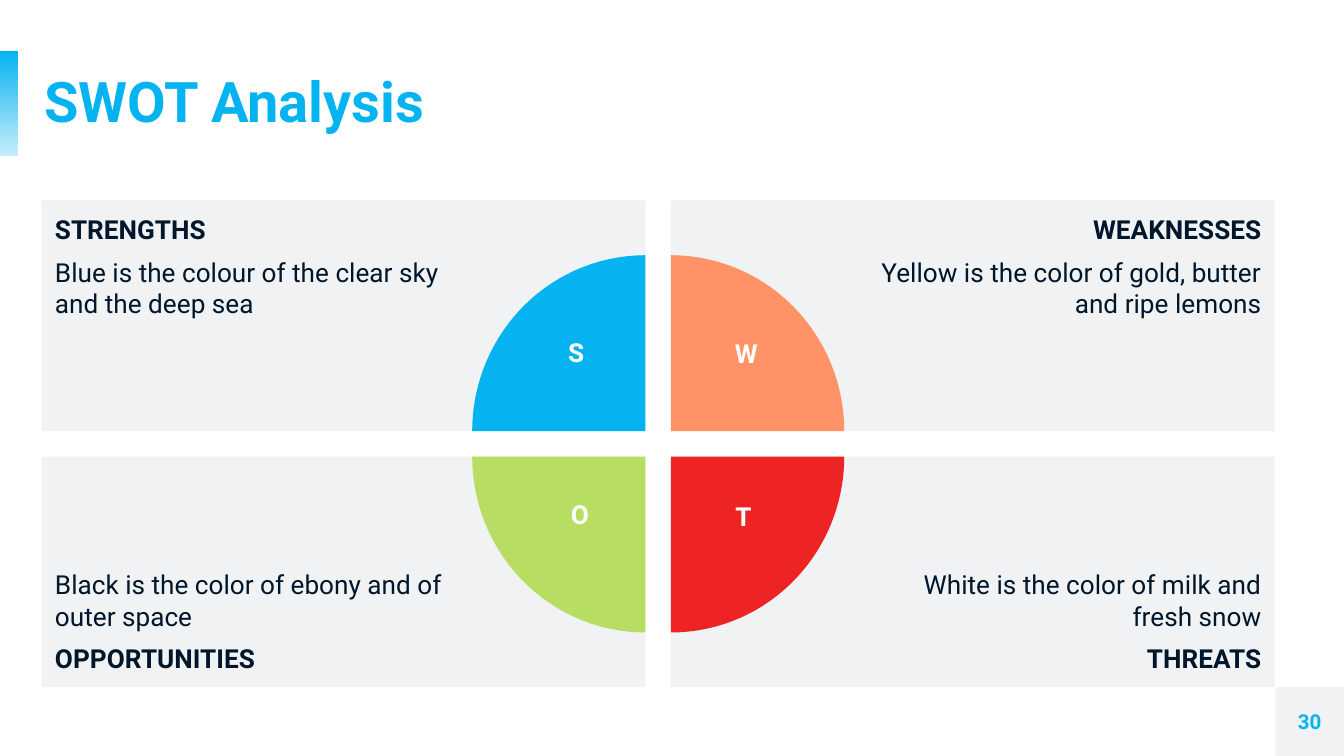
from dataclasses import dataclass

from lxml.etree import SubElement
from pptx import Presentation
from pptx.dml.color import RGBColor as Rgb
from pptx.enum.shapes import MSO_SHAPE as Preset
from pptx.enum.text import MSO_ANCHOR as Anchor, PP_ALIGN as Align
from pptx.oxml.ns import qn
from pptx.util import Cm, Pt


@dataclass(frozen=True)
class Theme:
    font: str = "Roboto"
    accent: str = "05B3F1"
    panel: str = "F0F2F3"
    ink: str = "00162A"
    white: str = "FFFFFF"
    orange: str = "FF9367"
    red: str = "EE2424"
    green: str = "B8DD63"
    title_size: int = 30
    body_size: int = 14
    number_size: int = 11


class SlideBuilder:
    def __init__(self, slide, theme):
        self.slide = slide
        self.theme = theme

    def frame(self, shape, anchor, insets):
        text_frame = shape.text_frame
        text_frame.word_wrap = True
        text_frame.vertical_anchor = anchor
        (text_frame.margin_left, text_frame.margin_top,
         text_frame.margin_right, text_frame.margin_bottom) = map(Cm, insets)
        return text_frame

    def add_text(self, paragraph, text, size, color, bold=True, align=Align.LEFT):
        paragraph.alignment = align
        run = paragraph.add_run()
        run.text = text
        run.font.name = self.theme.font
        run.font.size = Pt(size)
        run.font.bold = bold
        run.font.color.rgb = Rgb.from_string(color)

    def shape(self, preset, box, color):
        shape = self.slide.shapes.add_shape(preset, *map(Cm, box))
        shape.shadow.inherit = False
        shape.line.fill.background()
        shape.fill.solid()
        shape.fill.fore_color.rgb = Rgb.from_string(color)
        return shape

    def fading_bar(self, box):
        bar = self.shape(Preset.RECTANGLE, box, self.theme.accent)
        bar.fill.gradient()
        bar.fill.gradient_angle = 90
        for stop in bar.fill.gradient_stops:
            stop.color.rgb = Rgb.from_string(self.theme.accent)
        first_color = bar.element.xpath(".//a:gs[1]/a:srgbClr")[0]
        SubElement(first_color, qn("a:alpha"), val="22000")

    def title(self, text, box):
        title = self.slide.shapes.title
        title.left, title.top, title.width, title.height = map(Cm, box)
        paragraph = self.frame(title, Anchor.MIDDLE, (0, 0, 0, 0)).paragraphs[0]
        paragraph.line_spacing = 0.9
        self.add_text(paragraph, text, self.theme.title_size, self.theme.accent)

    def label(self, text, box, size, color, anchor=Anchor.TOP, insets=(0.25, 0.13, 0.25, 0.13)):
        holder = self.slide.shapes.add_textbox(*map(Cm, box))
        paragraph = self.frame(holder, anchor, insets).paragraphs[0]
        self.add_text(paragraph, text, size, color, align=Align.CENTER)

    def panel(self, box, heading, body, on_right, on_bottom):
        panel = self.shape(Preset.RECTANGLE, box, self.theme.panel)
        # The wide inset keeps the text clear of the quarter circle
        insets = (3.81, 0.25, 0.25, 0.25) if on_right else (0.25, 0.25, 3.81, 0.25)
        text_frame = self.frame(panel, Anchor.BOTTOM if on_bottom else Anchor.TOP, insets)
        lines = [(heading, True), (body, False)]
        if on_bottom:
            lines.reverse()
        first, last = text_frame.paragraphs[0], text_frame.add_paragraph()
        for paragraph, (text, bold) in zip((first, last), lines):
            self.add_text(paragraph, text, self.theme.body_size, self.theme.ink, bold,
                          Align.RIGHT if on_right else Align.LEFT)
        last.space_before = last.space_after = Pt(6)

    def quarter(self, center_x, center_y, rotation, color):
        width, height = 6.55, 6.65
        if rotation % 180:
            width, height = height, width
        box = (center_x - width / 2, center_y - height / 2, width, height)
        pie = self.shape(Preset.PIE, box, color)
        # Sweep from 180 to 270 degrees: the upper left quarter
        pie.adjustments[0], pie.adjustments[1] = 108, 162
        pie.rotation = rotation


def main():
    theme = Theme()
    deck = Presentation()
    deck.slide_width, deck.slide_height = Cm(25.4), Cm(14.29)
    builder = SlideBuilder(deck.slides.add_slide(deck.slide_layouts[5]), theme)

    # Title with its accent bar
    builder.fading_bar((-0.02, 0.98, 0.36, 1.97))
    builder.title("SWOT Analysis", (0.84, 0.98, 23.55, 1.97))

    # Page number
    corner = (24.1, 12.99, 1.3, 1.3)
    builder.shape(Preset.RECTANGLE, corner, theme.panel)
    builder.label("30", corner, theme.number_size, theme.accent, Anchor.MIDDLE, (0, 0, 0, 0))

    # Column, row, heading, body, rotation, colour, letter, letter box
    quadrants = [
        (0, 0, "STRENGTHS", "Blue is the colour of the clear sky and the deep sea",
         0, theme.accent, "S", (10.46, 6.22, 0.86, 1.24)),
        (1, 0, "WEAKNESSES", "Yellow is the color of gold, butter and ripe lemons",
         90, theme.orange, "W", (13.28, 6.25, 1.65, 1.2)),
        (0, 1, "OPPORTUNITIES", "Black is the color of ebony and of outer space",
         270, theme.green, "O", (10.36, 9.3, 1.2, 1.24)),
        (1, 1, "THREATS", "White is the color of milk and fresh snow",
         180, theme.red, "T", (13.59, 9.32, 0.92, 1.2)),
    ]
    left, top, width, height, gap = 0.79, 3.79, 11.41, 4.36, 0.48

    # Panels
    for column, row, heading, body, *_ in quadrants:
        box = (left + column * (width + gap), top + row * (height + gap), width, height)
        builder.panel(box, heading, body, column == 1, row == 1)

    # Quarter circles, each centred on the inner corner of its panel
    for column, row, _, _, rotation, color, *_ in quadrants:
        builder.quarter(left + width + column * gap, top + height + row * gap, rotation, color)

    # Letters
    for *_, letter, box in quadrants:
        builder.label(letter, box, theme.body_size, theme.white)

    deck.save("out.pptx")


if __name__ == "__main__":
    main()
